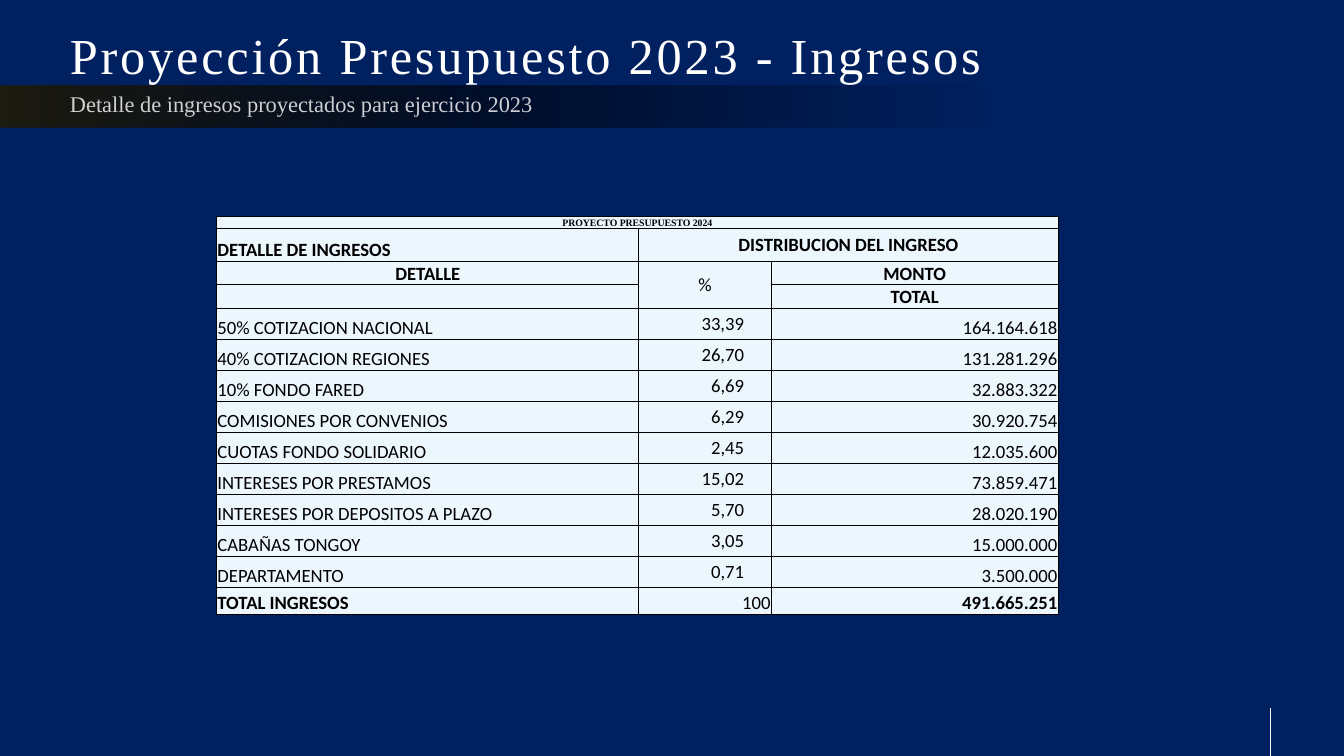
"""Build the slide with the projected income budget table."""
from lxml.etree import SubElement
from pptx import Presentation
from pptx.dml.color import RGBColor
from pptx.enum.shapes import MSO_CONNECTOR, MSO_SHAPE
from pptx.enum.text import MSO_ANCHOR, MSO_AUTO_SIZE, PP_ALIGN
from pptx.oxml import parse_xml
from pptx.oxml.ns import nsdecls, qn
from pptx.util import Pt

NAVY = RGBColor(0x00, 0x20, 0x60)
WHITE = RGBColor(0xFF, 0xFF, 0xFF)
BLACK = RGBColor(0x00, 0x00, 0x00)
OLIVE = RGBColor(0x1E, 0x1C, 0x11)
PALE_BLUE = RGBColor(0xEC, 0xF6, 0xFD)

LEFT, CENTER, RIGHT = PP_ALIGN.LEFT, PP_ALIGN.CENTER, PP_ALIGN.RIGHT
MIDDLE, BOTTOM = MSO_ANCHOR.MIDDLE, MSO_ANCHOR.BOTTOM

COLUMN_WIDTHS = [452.2, 141.8, 307.4]
ROW_HEIGHTS = [11.5, 35.3, 24.7, 25.2] + [33.2] * 9 + [29.5]
MERGES = [(0, 0, 0, 2), (1, 1, 1, 2), (2, 1, 3, 1)]
PERCENT_INDENT = 29

INCOME = [
    ("50% COTIZACION NACIONAL", "33,39", "164.164.618"),
    ("40% COTIZACION REGIONES", "26,70", "131.281.296"),
    ("10% FONDO FARED", "6,69", "32.883.322"),
    ("COMISIONES POR CONVENIOS", "6,29", "30.920.754"),
    ("CUOTAS FONDO SOLIDARIO", "2,45", "12.035.600"),
    ("INTERESES POR PRESTAMOS", "15,02", "73.859.471"),
    ("INTERESES POR DEPOSITOS A PLAZO", "5,70", "28.020.190"),
    ("CABAÑAS TONGOY", "3,05", "15.000.000"),
    ("DEPARTAMENTO", "0,71", "3.500.000"),
]


class SlideBuilder:
    """Hold the style and the current slide, and add its elements."""

    heading_font = "Times New Roman"
    table_font = "Calibri"
    insets = {"margin_left": Pt(13), "margin_right": Pt(13),
              "margin_top": Pt(6.5), "margin_bottom": Pt(6.5)}

    def __init__(self, deck):
        self.slide = deck.slides.add_slide(deck.slide_layouts[5])
        fill = self.slide.background.fill
        fill.solid()
        fill.fore_color.rgb = NAVY

    def apply(self, target, values):
        for name, value in values.items():
            setattr(target, name, value)

    def add_text(self, frame, text, size, color, font, bold=False, **para_format):
        para = frame.paragraphs[0]
        self.apply(para, para_format)
        span = para.add_run()
        span.text = text
        self.apply(span.font, {"size": Pt(size), "name": font, "bold": bold})
        span.font.color.rgb = color
        return span

    def title(self, text, left, top, width, height):
        box = self.slide.shapes.title
        self.apply(box, {"left": Pt(left), "top": Pt(top),
                         "width": Pt(width), "height": Pt(height)})
        self.apply(box.text_frame, {**self.insets, "vertical_anchor": BOTTOM, "word_wrap": True,
                                    "auto_size": MSO_AUTO_SIZE.NONE})
        span = self.add_text(box.text_frame, text, 54, WHITE, self.heading_font, alignment=LEFT)
        span.font._element.set("spc", "300")

    def subtitle(self, text, left, top, width, height):
        box = self.slide.shapes.add_textbox(Pt(left), Pt(top), Pt(width), Pt(height))
        self.apply(box.text_frame, {**self.insets, "word_wrap": True})
        span = self.add_text(box.text_frame, text, 24, WHITE, self.heading_font,
                             line_spacing=0.9, space_after=Pt(6))
        color = span.font._element.find(".//" + qn("a:srgbClr"))
        SubElement(color, qn("a:alpha"), val="80000")

    def band(self, left, top, width, height, stops):
        box = self.slide.shapes.add_shape(
            MSO_SHAPE.RECTANGLE, Pt(left), Pt(top), Pt(width), Pt(height))
        box.shadow.inherit = False
        box.line.fill.background()
        box.fill.gradient()
        box.fill.gradient_angle = 0
        stop_list = box._element.spPr.find(".//" + qn("a:gsLst"))
        stop_list.clear()
        for position, color, opacity in stops:
            stop = SubElement(stop_list, qn("a:gs"), pos=str(position * 1000))
            shade = SubElement(stop, qn("a:srgbClr"), val=str(color))
            SubElement(shade, qn("a:alpha"), val=str(opacity * 1000))

    def line(self, start_x, start_y, end_x, end_y):
        rule = self.slide.shapes.add_connector(
            MSO_CONNECTOR.STRAIGHT, Pt(start_x), Pt(start_y), Pt(end_x), Pt(end_y))
        rule.line.color.rgb = WHITE
        rule.line.width = Pt(0.75)
        SubElement(rule._element.spPr, qn("a:effectLst"))

    def border(self, cell):
        properties = cell._tc.get_or_add_tcPr()
        for index, side in enumerate(("lnL", "lnR", "lnT", "lnB")):
            properties.insert(index, parse_xml(
                f'<a:{side} {nsdecls("a")} w="{Pt(1)}"><a:solidFill>'
                f'<a:srgbClr val="{BLACK}"/></a:solidFill></a:{side}>'))

    def cell(self, cell, text, align=LEFT, anchor=BOTTOM, bold=False,
             size=20, font=table_font, indent=0.7):
        self.apply(cell, {"margin_left": Pt(0.7), "margin_right": Pt(indent),
                          "margin_top": Pt(0.7), "margin_bottom": 0,
                          "vertical_anchor": anchor})
        self.add_text(cell.text_frame, text, size, BLACK, font, bold, alignment=align)

    def table(self, left, top, contents):
        shape = self.slide.shapes.add_table(
            len(ROW_HEIGHTS), len(COLUMN_WIDTHS), Pt(left), Pt(top),
            Pt(sum(COLUMN_WIDTHS)), Pt(sum(ROW_HEIGHTS)))
        table = shape.table
        for column, width in zip(table.columns, COLUMN_WIDTHS):
            column.width = Pt(width)
        for row, height in zip(table.rows, ROW_HEIGHTS):
            row.height = Pt(height)
        for cell in table.iter_cells():
            cell.fill.solid()
            cell.fill.fore_color.rgb = PALE_BLUE
            self.border(cell)
        for first_row, first_column, last_row, last_column in MERGES:
            table.cell(first_row, first_column).merge(table.cell(last_row, last_column))
        for (row, column), (text, style) in contents.items():
            self.cell(table.cell(row, column), text, **style)


def table_contents():
    """Return the text and style of each table cell by row and column."""
    heading = {"align": CENTER, "bold": True}
    contents = {
        (0, 0): ("PROYECTO PRESUPUESTO 2024",
                 {**heading, "anchor": MIDDLE, "size": 10.5,
                  "font": SlideBuilder.heading_font}),
        (1, 0): ("DETALLE DE INGRESOS", {"bold": True}),
        (1, 1): ("DISTRIBUCION DEL INGRESO", {**heading, "anchor": MIDDLE}),
        (2, 0): ("DETALLE", heading),
        (2, 1): ("%", {"align": CENTER, "anchor": MIDDLE}),
        (2, 2): ("MONTO", heading),
        (3, 0): ("", {}),
        (3, 2): ("TOTAL", heading),
    }
    for row, (name, percent, amount) in enumerate(INCOME, start=4):
        contents[row, 0] = (name, {})
        contents[row, 1] = (percent, {"align": RIGHT, "anchor": MIDDLE,
                                      "indent": PERCENT_INDENT})
        contents[row, 2] = (amount, {"align": RIGHT})
    total_row = len(ROW_HEIGHTS) - 1
    contents[total_row, 0] = ("TOTAL INGRESOS", {"bold": True})
    contents[total_row, 1] = ("100", {"align": RIGHT})
    contents[total_row, 2] = ("491.665.251", {"align": RIGHT, "bold": True})
    return contents


def main():
    """Build and save the deck."""
    deck = Presentation()
    deck.slide_width, deck.slide_height = Pt(1440), Pt(810)
    page = SlideBuilder(deck)
    page.band(0, 91.4, 1440, 45.4, [(0, OLIVE, 100), (39, BLACK, 54), (74, BLACK, 0)])
    page.line(1360.8, 758.9, 1360.8, 810)
    page.title("Proyección Presupuesto 2023 - Ingresos", 61.9, 0, 1296, 97.2)
    page.subtitle("Detalle de ingresos proyectados para ejercicio 2023",
                  61.9, 92.9, 1281.6, 45.4)
    page.table(232.3, 231.8, table_contents())
    deck.save("out.pptx")


if __name__ == "__main__":
    main()
